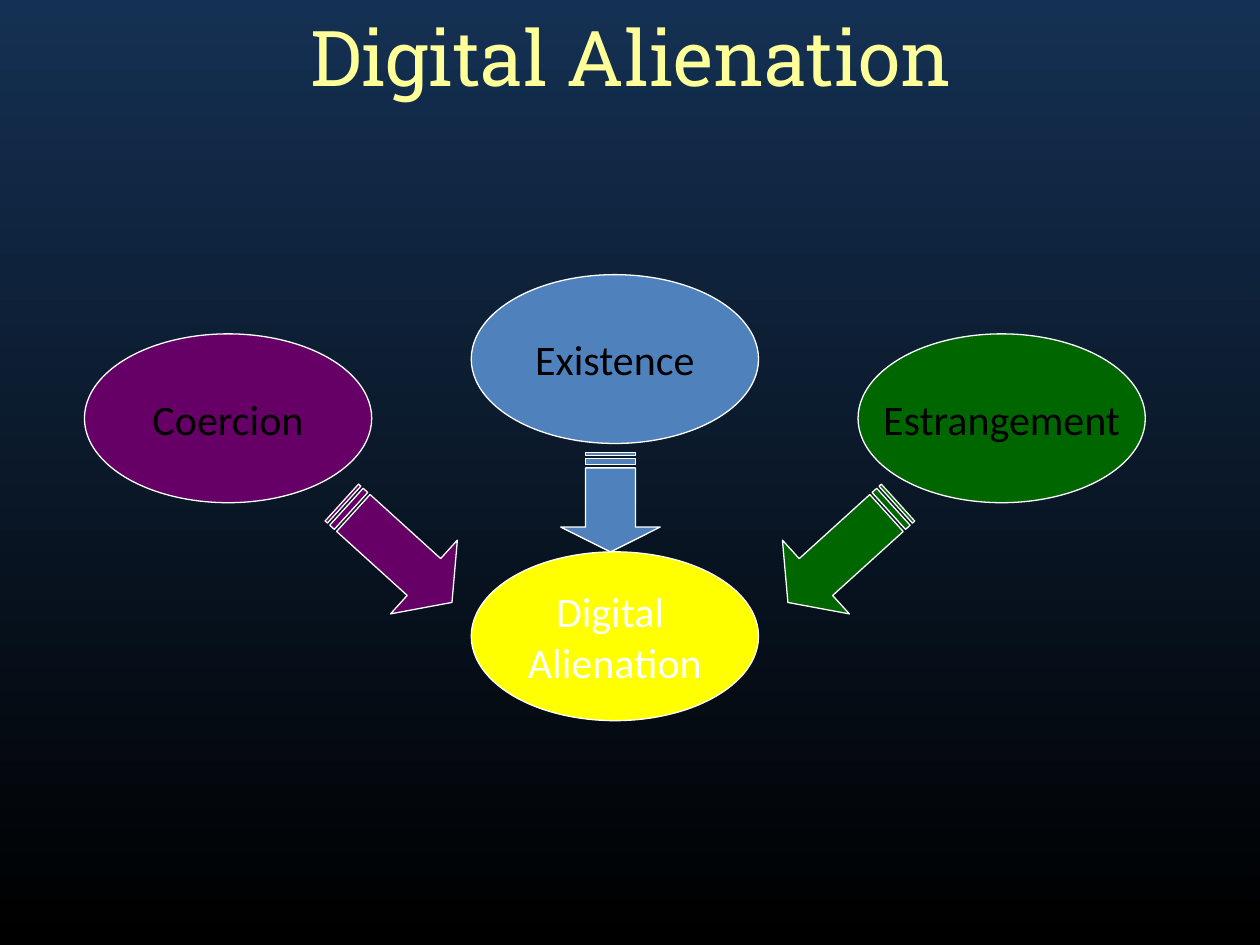
"""Build the Digital Alienation slide: three causes with arrows to one result."""
from pptx import Presentation
from pptx.dml.color import RGBColor
from pptx.enum.shapes import MSO_SHAPE
from pptx.enum.text import MSO_ANCHOR, PP_ALIGN
from pptx.util import Inches, Pt


def rgb(color):
    return RGBColor.from_string(color)


def add_filled(kind, left, top, width, height, color):
    sp = slide.shapes.add_shape(kind, Inches(left), Inches(top), Inches(width), Inches(height))
    sp.shadow.inherit = False
    sp.fill.solid()
    sp.fill.fore_color.rgb = rgb(color)
    sp.line.color.rgb = rgb("FFFFFF")
    sp.line.width = Pt(0.75)
    return sp


prs = Presentation()
prs.slide_width, prs.slide_height = Inches(10), Inches(7.5)
slide = prs.slides.add_slide(prs.slide_layouts[5])

fill = slide.background.fill
fill.gradient()
fill.gradient_angle = 270
for stop, color in zip(fill.gradient_stops, ("143052", "000000")):
    stop.color.rgb = rgb(color)

title = slide.shapes.title
box = {"left": -0.03 + 0.54, "top": -0.03, "width": 9, "height": 0.95}
for name, value in box.items():
    setattr(title, name, Inches(value))
title.text_frame.text = "Digital Alienation"
title.text_frame.vertical_anchor = MSO_ANCHOR.MIDDLE
p = title.text_frame.paragraphs[0]
p.alignment = PP_ALIGN.CENTER
for name, value in {"name": "Roboto Slab", "size": Pt(44)}.items():
    setattr(p.runs[0].font, name, value)
p.runs[0].font.color.rgb = rgb("FFFF99")

ovals = [
    ("Digital \vAlienation", 3.74, 4.38, "FFFF00", "FFFFFF"),
    ("Coercion", 0.67, 2.65, "660066", "000000"),
    ("Estrangement", 6.81, 2.65, "006600", "000000"),
    ("Existence", 3.74, 2.18, "4F81BD", "000000"),
]
for text, left, top, color, text_color in ovals:
    tf = add_filled(MSO_SHAPE.OVAL, left, top, 2.28, 1.34, color).text_frame
    tf.text = text
    tf.word_wrap = False
    tf.vertical_anchor = MSO_ANCHOR.MIDDLE
    p = tf.paragraphs[0]
    p.alignment = PP_ALIGN.CENTER
    for r in p.runs:
        for name, value in {"name": "Calibri", "size": Pt(24)}.items():
            setattr(r.font, name, value)
        r.font.color.rgb = rgb(text_color)

arrows = [
    (2.56, 3.99, 1.18, 42.2, 0.38, "660066"),
    (6.1, 3.99, 1.18, 137.8, 0.38, "006600"),
    (4.45, 3.59, 0.79, 90, 0.25, "4F81BD"),
]
for left, top, length, angle, head, color in arrows:
    sp = add_filled(MSO_SHAPE.STRIPED_RIGHT_ARROW, left, top, length, 0.79, color)
    sp.rotation = angle
    sp.adjustments[0] = 0.5
    sp.adjustments[1] = head

prs.save("out.pptx")
